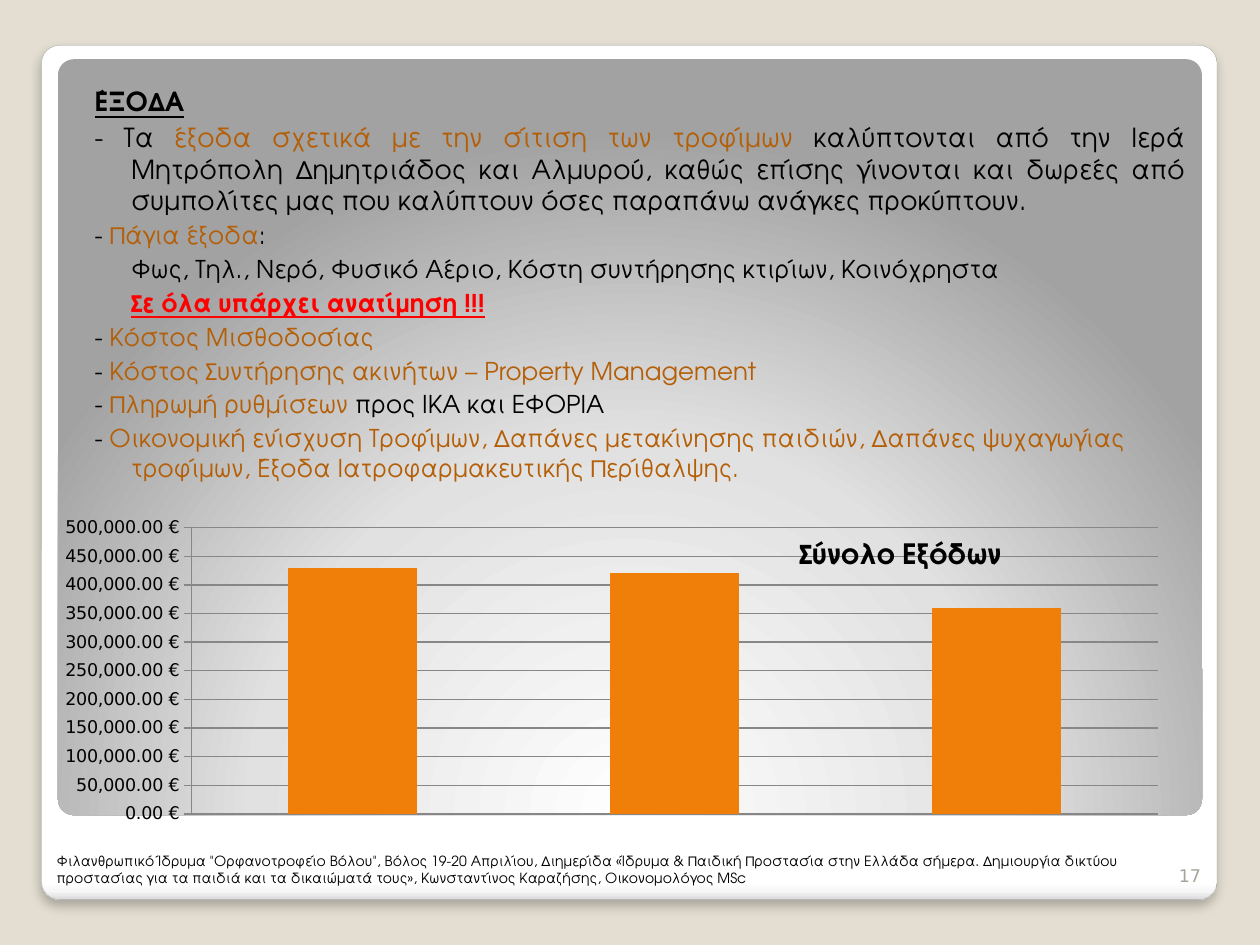
from lxml.etree import SubElement
from pptx import Presentation
from pptx.chart.data import CategoryChartData
from pptx.dml.color import RGBColor
from pptx.enum.chart import XL_CHART_TYPE, XL_TICK_MARK
from pptx.enum.shapes import MSO_SHAPE
from pptx.enum.text import MSO_ANCHOR, PP_ALIGN
from pptx.oxml import parse_xml
from pptx.oxml.ns import nsdecls, qn
from pptx.util import Inches, Pt

COLORS = {
    "background": "E3DED1", "black": "000000", "brown": "B45F07", "red": "FF0000",
    "number": "A8A49B", "bar": "F07F09", "grid": "878787", "edge": "A4A4A4",
}
HEADING_FONT, PLAIN_FONT = "TeX Gyre Adventor", "DejaVu Sans"

presentation = Presentation()
presentation.slide_width, presentation.slide_height = Inches(10), Inches(7.5)
slide = presentation.slides.add_slide(presentation.slide_layouts[6])
slide.background.fill.solid()
slide.background.fill.fore_color.rgb = RGBColor.from_string(COLORS["background"])


def area(left, top, width, height):
    """Turn percentages of the slide's width and height into lengths."""
    across, down = presentation.slide_width / 100, presentation.slide_height / 100
    return [int(left * across), int(top * down), int(width * across), int(height * down)]


def style_font(font, size, color, name=HEADING_FONT, bold=False):
    font.size, font.name, font.bold = Pt(size), name, bold
    font.color.rgb = RGBColor.from_string(COLORS[color])


# Card and panel with gradient fills
panels = [
    (area(3.3, 4.8, 93.3, 90.4),
     [(0, "FFFFFF"), (98, "FFFFFF"), (99, "F7F7F7"), (100, "DADADA")],
     '<a:lin ang="5400000" scaled="0"/>'),
    (area(4.6, 6.27, 90.8, 80),
     [(0, "FFFFFF"), (55, "E1E1E1"), (100, "A2A2A2")],
     '<a:path path="circle"><a:fillToRect l="50000" t="175000" r="50000" b="-75000"/></a:path>'),
]
shapes = []
for place, stops, direction in panels:
    shape = slide.shapes.add_shape(MSO_SHAPE.ROUNDED_RECTANGLE, *place)
    shape.adjustments[0] = 0.021
    shape.shadow.inherit = False
    shape.line.fill.background()
    stop_list = "".join(
        f'<a:gs pos="{share * 1000}"><a:srgbClr val="{color}"/></a:gs>' for share, color in stops)
    shape._element.spPr.find(qn("a:prstGeom")).addnext(parse_xml(
        f'<a:gradFill {nsdecls("a")} rotWithShape="1"><a:gsLst>{stop_list}</a:gsLst>'
        f'{direction}</a:gradFill>'))
    shapes.append(shape)

card = shapes[0]
card.line.color.rgb = RGBColor.from_string(COLORS["edge"])
card.line.width = Pt(0.16)
shadow = SubElement(card._element.spPr.find(qn("a:effectLst")), qn("a:outerShdw"),
                    blurRad=str(Pt(6)), dist=str(Pt(4)), dir="5400000", rotWithShape="0")
shadow_color = SubElement(shadow, qn("a:srgbClr"), val=COLORS["black"])
SubElement(shadow_color, qn("a:alpha"), val="25000")

# Expenses: (size, hanging, runs of text, colour and emphasis)
expenses = [
    (15, True, [("ΈΞΟΔΑ", "black", True)]),
    (15, True, [
        ("- Τα ", "black", False),
        ("έξοδα σχετικά με την σίτιση των τροφίμων", "brown", False),
        (" καλύπτονται από την Ιερά Μητρόπολη Δημητριάδος και Αλμυρού, καθώς επίσης γίνονται "
         "και δωρεές από συμπολίτες μας που καλύπτουν όσες παραπάνω ανάγκες προκύπτουν.",
         "black", False)]),
    (14, True, [("- ", "black", False), ("Πάγια έξοδα", "brown", False), (":", "black", False)]),
    (14, False, [("Φως, Τηλ., Νερό, Φυσικό Αέριο, Κόστη συντήρησης κτιρίων, Κοινόχρηστα",
                  "black", False)]),
    (14, False, [("Σε όλα υπάρχει ανατίμηση !!!", "red", True)]),
    (14, True, [("- ", "black", False), ("Κόστος Μισθοδοσίας", "brown", False)]),
    (14, True, [("- ", "black", False),
                ("Κόστος Συντήρησης ακινήτων – Property Management", "brown", False)]),
    (14, True, [("- ", "black", False), ("Πληρωμή ρυθμίσεων ", "brown", False),
                ("προς ΙΚΑ και ΕΦΟΡΙΑ", "black", False)]),
    (14, True, [("- ", "black", False),
                ("Οικονομική ενίσχυση Τροφίμων, Δαπάνες μετακίνησης παιδιών, Δαπάνες ψυχαγωγίας "
                 "τροφίμων, Έξοδα Ιατροφαρμακευτικής Περίθαλψης.", "brown", False)]),
]
body = slide.shapes.add_textbox(*area(5.5, 7.73, 89.5, 78)).text_frame
body.word_wrap = True
body.margin_left, body.margin_top = Inches(0.2), Inches(0.1)
for index, (size, hanging, runs) in enumerate(expenses):
    paragraph = body.add_paragraph() if index else body.paragraphs[0]
    paragraph.space_before = Pt(2.5)
    paragraph.alignment = PP_ALIGN.JUSTIFY if index == 1 else PP_ALIGN.LEFT
    properties = paragraph._p.get_or_add_pPr()
    properties.set("marL", str(Inches(0.29)))
    properties.set("indent", str(Inches(-0.29) if hanging else 0))
    for text, color, emphasis in runs:
        run = paragraph.add_run()
        run.text = text
        style_font(run.font, size, color, bold=emphasis)
        run.font.underline = emphasis

# Footer and slide number
footers = [
    (area(3.5, 89.07, 92.9, 5.33), PP_ALIGN.LEFT, 8, "black", HEADING_FONT,
     'Φιλανθρωπικό Ίδρυμα "Ορφανοτροφείο Βόλου", Βόλος 19-20 Απριλίου, Διημερίδα «Ίδρυμα & '
     'Παιδική Προστασία στην Ελλάδα σήμερα. Δημιουργία δικτύου προστασίας για τα παιδιά και τα '
     'δικαιώματά τους», Κωνσταντίνος Καραζήσης, Οικονομολόγος MSc'),
    (area(91.3, 89.07, 5, 5.33), PP_ALIGN.RIGHT, 10, "number", PLAIN_FONT, "17"),
]
for place, alignment, size, color, font_name, text in footers:
    frame = slide.shapes.add_textbox(*place).text_frame
    frame.word_wrap = True
    frame.vertical_anchor = MSO_ANCHOR.BOTTOM
    paragraph = frame.paragraphs[0]
    paragraph.alignment = alignment
    run = paragraph.add_run()
    run.text = text
    style_font(run.font, size, color, font_name)

# Chart of total expenses
chart_data = CategoryChartData()
chart_data.categories = ["1", "2", "3"]
chart_data.add_series("Σύνολο Εξόδων", [430000, 420000, 360000])
chart = slide.shapes.add_chart(
    XL_CHART_TYPE.COLUMN_CLUSTERED, *area(3.5, 47.87, 90.2, 39.87), chart_data).chart
style_font(chart.font, 10, "black", PLAIN_FONT)
chart.has_legend = False
plot = chart.plots[0]
plot.gap_width = 150
plot.vary_by_categories = False
bars = plot.series[0].format.fill
bars.solid()
bars.fore_color.rgb = RGBColor.from_string(COLORS["bar"])

chart.category_axis.visible = False
value_axis = chart.value_axis
value_axis.minimum_scale, value_axis.maximum_scale, value_axis.major_unit = 0, 500000, 50000
value_axis.major_tick_mark = XL_TICK_MARK.CROSS
value_axis.tick_labels.number_format = '#,##0.00 "€"'
value_axis.tick_labels.number_format_is_linked = False
for line in (value_axis.format.line, value_axis.major_gridlines.format.line):
    line.color.rgb = RGBColor.from_string(COLORS["grid"])
    line.width = Pt(0.75)

chart.has_title = True
title = chart.chart_title
title.include_in_layout = False
run = title.text_frame.paragraphs[0].add_run()
run.text = "Σύνολο Εξόδων"
style_font(run.font, 16, "black", bold=True)

# Title and plot area are placed as shares of the chart
plot_area = chart._chartSpace.chart.plotArea
layouts = [
    (title._element, {"xMode": "edge", "yMode": "edge", "x": 0.66, "y": 0.22}),
    (plot_area, {"layoutTarget": "inner", "xMode": "edge", "yMode": "edge",
                 "x": 0.13, "y": 0.2, "w": 0.85, "h": 0.76}),
]
for element, values in layouts:
    for old_layout in element.findall(qn("c:layout")):
        element.remove(old_layout)
    entries = "".join(f'<c:{name} val="{value}"/>' for name, value in values.items())
    layout = parse_xml(f'<c:layout {nsdecls("c")}><c:manualLayout>{entries}'
                       '</c:manualLayout></c:layout>')
    element.insert(0 if element is plot_area else 1, layout)

presentation.save("out.pptx")
